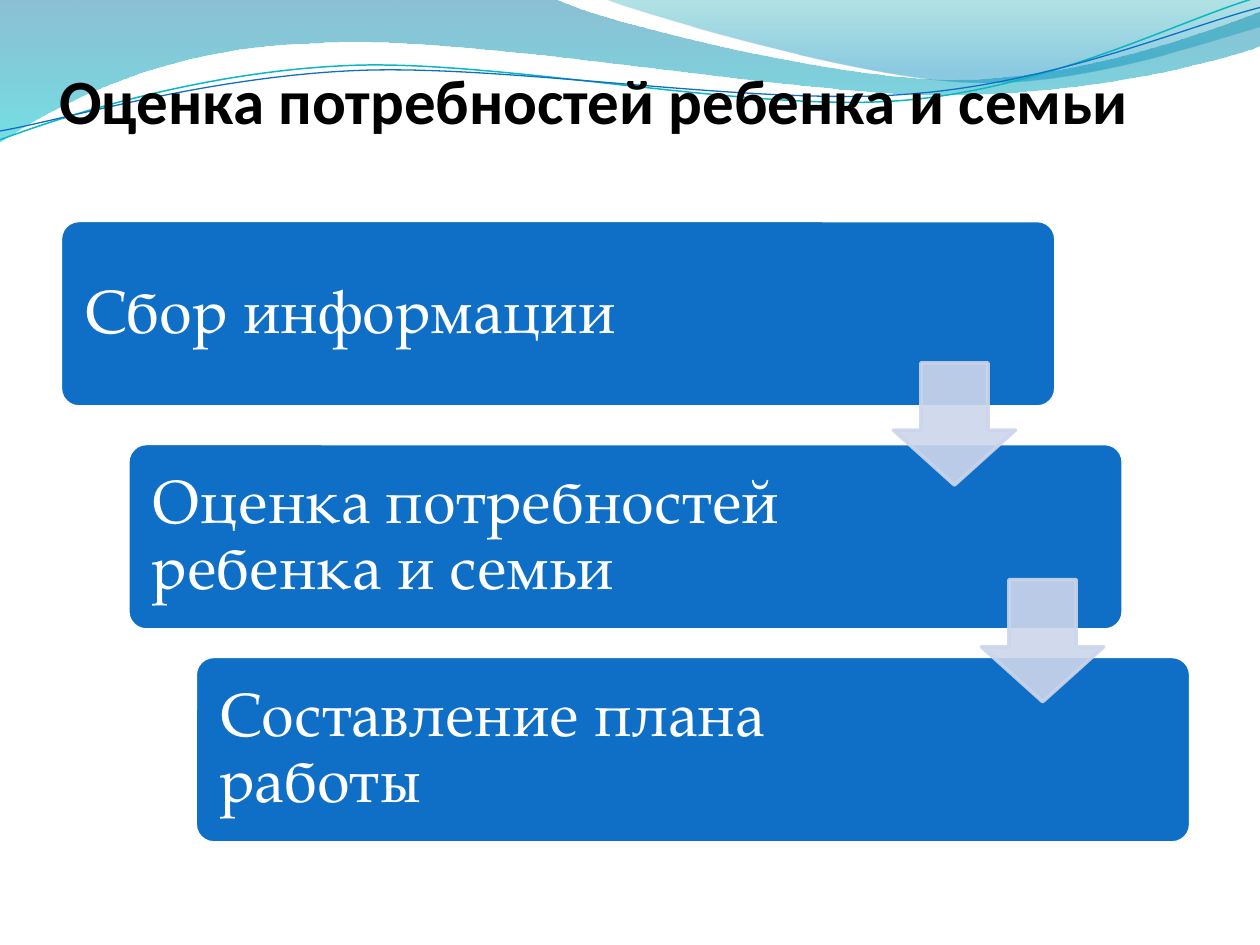
import math

import pptx
import pptx.dml.color
import pptx.enum.shapes
import pptx.enum.text
import pptx.oxml.ns
import pptx.util
import lxml.etree

WIDTH, HEIGHT = 10, 7.5
BLUE, PALE, WHITE, BLACK = "0F6FC6", "CCD5EA", "FFFFFF", "000000"
LINE_TILT = 357.3

# Wave outlines in inches: a start point, then line ends (2 numbers) or Bezier curves (6 numbers)
BACK_WAVE = [(0, 0), (4.4, -0.01), (4.76, 0.17, 6.64, 0.63, 7.58, 0.63),
             (8.53, 0.63, 9.58, 0.26, 10, 0.09), (10.01, 0.36),
             (9.83, 0.44, 8.7, 0.76, 7.46, 0.75), (6.22, 0.75, 3.82, 0.28, 2.57, 0.34),
             (1.29, 0.36, 0.46, 0.83, -0.01, 1.13), (0, 0)]
FRONT_WAVE = [(4.79, -0.01), (5.09, 0.11, 6.82, 0.62, 7.69, 0.65),
              (8.56, 0.69, 9.61, 0.32, 10, 0.21), (10, 0), (4.79, -0.01)]
TEAL_LINE = [(0, 1.11), (0.48, 0.93, 1.58, 0.57, 2.77, 0.52),
             (3.95, 0.47, 5.93, 0.89, 7.13, 0.8), (8.33, 0.71, 9.38, 0.15, 9.98, -0.02)]
BLUE_LINE = [(0, 1.04), (0.47, 0.96, 1.64, 0.61, 2.83, 0.56),
             (4.03, 0.51, 5.97, 0.84, 7.17, 0.75), (8.36, 0.67, 9.41, 0.21, 10, 0.06)]

# Step text, top of its card and width of its text
STEPS = [("Сбор информации", 1.75, 6.3),
         ("Оценка потребностей ребенка и семьи", 3.52, 6.15),
         ("Составление плана работы", 5.21, 6.15)]


def color(hex_text):
    return pptx.dml.color.RGBColor.from_string(hex_text)


def inches(values):
    return [pptx.util.Inches(value) for value in values]


def set_opacity(color_element, percent):
    alpha = lxml.etree.SubElement(color_element, pptx.oxml.ns.qn("a:alpha"))
    alpha.set("val", str(percent * 1000))


def color_elements(shape):
    return list(shape._element.spPr.iter(pptx.oxml.ns.qn("a:srgbClr")))


def write_text(shape, text, *, font, size, hex_text, bold=False, anchor="MIDDLE",
               margins=(0, 0, 0, 0), line_spacing=1.0):
    frame = shape.text_frame
    frame.word_wrap = True
    frame.auto_size = pptx.enum.text.MSO_AUTO_SIZE.NONE
    frame.vertical_anchor = pptx.enum.text.MSO_ANCHOR[anchor]
    (frame.margin_left, frame.margin_top,
     frame.margin_right, frame.margin_bottom) = inches(margins)
    paragraph = frame.paragraphs[0]
    paragraph.alignment = pptx.enum.text.PP_ALIGN.LEFT
    paragraph.line_spacing = line_spacing
    run = paragraph.add_run()
    run.text = text
    run.font.name, run.font.size, run.font.bold = font, pptx.util.Pt(size), bold
    run.font.color.rgb = color(hex_text)


def rotate(point, degrees):
    angle = math.radians(degrees)
    x, y = point
    return (x * math.cos(angle) - y * math.sin(angle),
            x * math.sin(angle) + y * math.cos(angle))


def bend(shape, outline):
    """Join each curve's three line ends into one Bezier segment."""
    segments = iter(list(shape._element.spPr.iter(pptx.oxml.ns.qn("a:lnTo"))))
    for part in outline[1:]:
        first = next(segments)
        if len(part) == 6:
            first.tag = pptx.oxml.ns.qn("a:cubicBezTo")
            for _ in range(2):
                follower = next(segments)
                first.append(follower[0])
                follower.getparent().remove(follower)


def add_outline(slide, outline, closed, tilt=0):
    points = [rotate(part[i:i + 2], -tilt) for part in outline for i in range(0, len(part), 2)]
    points = [inches(point) for point in points]
    builder = slide.shapes.build_freeform(*points[0], scale=1.0)
    builder.add_line_segments(points[1:], close=closed)
    shape = builder.convert_to_shape()
    bend(shape, outline)
    shape.shadow.inherit = False
    # Turn the shape about its own centre and put that centre in place
    center = rotate((shape.left + shape.width / 2, shape.top + shape.height / 2), tilt)
    shape.left = round(center[0] - shape.width / 2)
    shape.top = round(center[1] - shape.height / 2)
    shape.rotation = tilt
    return shape


def add_wave(slide, outline, stops):
    shape = add_outline(slide, outline, closed=True)
    shape.line.fill.background()
    shape.fill.gradient()
    shape.fill.gradient_angle = 270
    for stop, (position, hex_text, _) in zip(shape.fill.gradient_stops, stops):
        stop.position = position
        stop.color.rgb = color(hex_text)
    for element, (_, _, opacity) in zip(color_elements(shape), stops):
        set_opacity(element, opacity)


def add_wave_line(slide, outline, hex_text, width):
    shape = add_outline(slide, outline, closed=False, tilt=LINE_TILT)
    shape.fill.background()
    shape.line.color.rgb = color(hex_text)
    shape.line.width = pptx.util.Pt(width)


def add_waves(slide):
    add_wave(slide, BACK_WAVE, [(0, "0074A1", 45), (1, "00C6CF", 55)])
    add_wave(slide, FRONT_WAVE, [(0, "00A1A9", 30), (0.8, "008BBF", 45)])
    add_wave_line(slide, TEAL_LINE, "0AB8BF", 0.85)
    add_wave_line(slide, BLUE_LINE, BLUE, 0.75)


def add_title(slide, text, box):
    title = slide.shapes.title
    title.left, title.top, title.width, title.height = inches(box)
    write_text(title, text, font="Calibri", size=36, hex_text=BLACK, bold=True,
               anchor="BOTTOM", margins=(0, 0.05, 0, 0))
    # Bring the title in front of the waves
    slide.shapes._spTree.append(title._element)


def add_block(slide, kind, box, adjustments, fill, line):
    shape = slide.shapes.add_shape(pptx.enum.shapes.MSO_SHAPE[kind], *inches(box))
    shape.shadow.inherit = False
    for index, value in enumerate(adjustments):
        shape.adjustments[index] = value
    shape.fill.solid()
    shape.fill.fore_color.rgb = color(fill)
    shape.line.color.rgb = color(line)
    shape.line.width = pptx.util.Pt(2)
    return shape


def add_card(slide, text, box, text_width):
    left, top, _, height = box
    inset = 0.04
    add_block(slide, "ROUNDED_RECTANGLE", box, [0.1], BLUE, WHITE)
    label = slide.shapes.add_textbox(
        *inches((left + inset, top + inset, text_width, height - 2 * inset)))
    write_text(label, text, font="TeX Gyre Pagella", size=35, hex_text=WHITE,
               margins=(0.15,) * 4, line_spacing=0.9)


def add_arrow(slide, box):
    arrow = add_block(slide, "DOWN_ARROW", box, [0.55, 0.45], PALE, PALE)
    for element in color_elements(arrow):
        set_opacity(element, 90)


def add_staircase(slide, box):
    left, top, width, _ = box
    card_width, card_height, arrow_size = 7.9, 1.48, 0.97
    shift = (width - card_width) / (len(STEPS) - 1)
    for index, (text, card_top, text_width) in enumerate(STEPS):
        add_card(slide, text, (left + index * shift, card_top, card_width, card_height),
                 text_width)
    for index in range(len(STEPS) - 1):
        add_arrow(slide, (left + 6.61 + index * 0.7, top + 1.13 + index * 1.72,
                          arrow_size, arrow_size))


def main():
    presentation = pptx.Presentation()
    presentation.slide_width, presentation.slide_height = inches((WIDTH, HEIGHT))
    slide = presentation.slides.add_slide(presentation.slide_layouts[5])
    slide.background.fill.solid()
    slide.background.fill.fore_color.rgb = color(WHITE)
    add_waves(slide)
    add_title(slide, "Оценка потребностей ребенка и семьи", (0.47, 0.31, 9.08, 0.78))
    add_staircase(slide, (0.48, 1.75, 8.97, 4.94))
    presentation.save("out.pptx")


if __name__ == "__main__":
    main()
